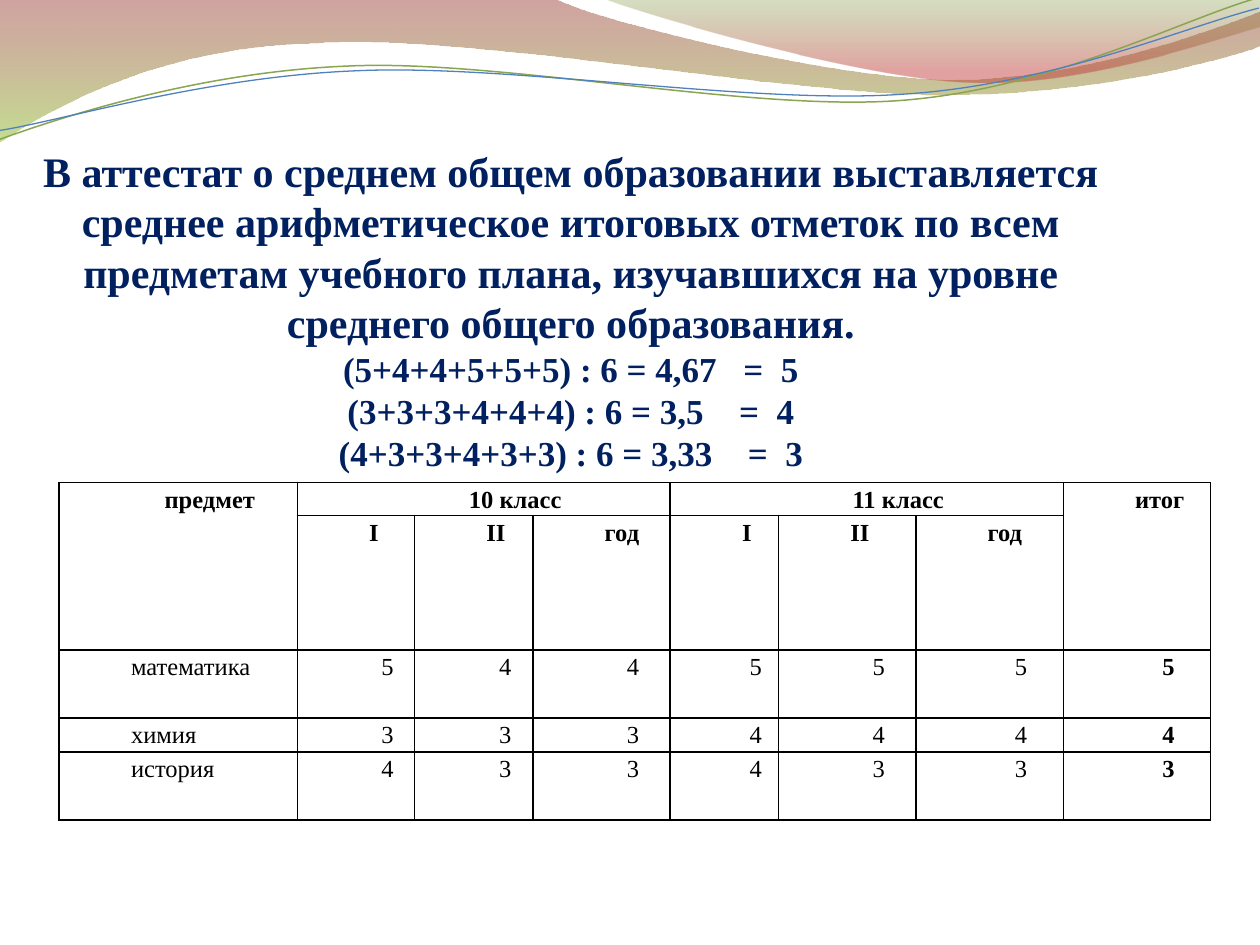
from lxml import etree
from pptx import Presentation
from pptx.dml.color import RGBColor
from pptx.enum import text
from pptx.oxml import ns
from pptx.util import Inches, Pt

FONT = "Times New Roman"
NAVY = RGBColor(0x00, 0x20, 0x60)
BLACK = RGBColor(0, 0, 0)
WINE = RGBColor(0x97, 0x33, 0x30)
LIME = RGBColor(0x95, 0xC2, 0x38)
OLIVE = RGBColor(0x76, 0x95, 0x37)
RED = RGBColor(0xBE, 0x33, 0x30)
GREEN = RGBColor(0x89, 0xA5, 0x4F)
BLUE = RGBColor(0x4F, 0x81, 0xBD)

CENTER = text.PP_ALIGN.CENTER
LEFT = text.PP_ALIGN.LEFT


def write_text(paragraph, content, size=14, color=BLACK, bold=False,
               align=CENTER, tracking=0):
    """Add a run; tracking is extra letter spacing in points."""
    paragraph.alignment = align
    run = paragraph.add_run()
    run.text = content
    run.font.name = FONT
    run.font.size = Pt(size)
    run.font.bold = bold
    run.font.color.rgb = color
    if tracking:
        run.font._element.set("spc", str(tracking * 100))


def draw_outline(shapes, start, segments, close):
    """Draw a path whose segments are one point (line) or three (cubic curve)."""
    corners = [(Inches(x), Inches(y)) for segment in segments for x, y in segment]
    builder = shapes.build_freeform(Inches(start[0]), Inches(start[1]), scale=1.0)
    builder.add_line_segments(corners, close=close)
    shape = builder.convert_to_shape()
    shape.shadow.inherit = False
    lines = iter(list(shape._element.spPr.iter(ns.qn("a:lnTo"))))
    for segment in segments:
        line = next(lines)
        if len(segment) == 3:
            line.tag = ns.qn("a:cubicBezTo")
            for _ in range(2):
                extra = next(lines)
                line.append(extra[0])
                extra.getparent().remove(extra)
    return shape


presentation = Presentation()
presentation.slide_width = Inches(10)
presentation.slide_height = Inches(7.5)
slide = presentation.slides.add_slide(presentation.slide_layouts[6])

# Translucent waves: start, segments, gradient stops (position, colour, opacity %)
waves = [
    ((0, 0),
     [[(4.4, -0.01)],
      [(4.76, 0.17), (6.64, 0.63), (7.58, 0.63)],
      [(8.53, 0.63), (9.58, 0.26), (10, 0.09)],
      [(10.01, 0.36)],
      [(9.83, 0.44), (8.7, 0.76), (7.46, 0.75)],
      [(6.22, 0.75), (3.82, 0.28), (2.57, 0.34)],
      [(1.29, 0.36), (0.46, 0.83), (-0.01, 1.13)]],
     [(0, WINE, 45), (1, LIME, 55)]),
    ((4.79, -0.01),
     [[(5.09, 0.11), (6.82, 0.62), (7.69, 0.65)],
      [(8.56, 0.69), (9.61, 0.32), (10, 0.21)],
      [(10, 0)]],
     [(0, OLIVE, 30), (0.8, RED, 45)]),
]
for start, segments, stops in waves:
    wave = draw_outline(slide.shapes, start, segments, close=True)
    wave.line.fill.background()
    wave.fill.gradient()
    wave.fill.gradient_angle = 270
    for gradient_stop, (position, color, opacity) in zip(wave.fill.gradient_stops, stops):
        gradient_stop.position = position
        gradient_stop.color.rgb = color
    color_tags = wave._element.spPr.iter(ns.qn("a:srgbClr"))
    for color_tag, (position, color, opacity) in zip(color_tags, stops):
        etree.SubElement(color_tag, ns.qn("a:alpha"), val=str(opacity * 1000))

# Thin lines under the waves, tilted as whole shapes
strands = [
    ((-0.02, 0.87),
     [[(0.47, 0.72), (1.58, 0.41), (2.77, 0.42)],
      [(3.96, 0.42), (5.91, 0.93), (7.12, 0.9)],
      [(8.32, 0.87), (9.4, 0.36), (10, 0.22)]],
     GREEN, 0.85),
    ((-0.02, 0.8),
     [[(0.46, 0.75), (1.64, 0.45), (2.83, 0.46)],
      [(4.04, 0.46), (5.96, 0.88), (7.16, 0.85)],
      [(8.35, 0.83), (9.42, 0.42), (10.01, 0.3)]],
     BLUE, 0.75),
]
for start, segments, color, width in strands:
    strand = draw_outline(slide.shapes, start, segments, close=False)
    strand.rotation = 357.3
    strand.fill.background()
    strand.line.color.rgb = color
    strand.line.width = Pt(width)

# Grades table
column_widths = [1.89, 0.93, 0.94, 1.09, 0.86, 1.09, 1.17, 1.17]
row_heights = [0.26, 1.07, 0.54, 0.27, 0.54]
rows = [
    ["предмет", "10 класс", "", "", "11 класс", "", "", "итог"],
    ["", "I", "II", "год", "I", "II", "год", ""],
    ["математика", "5", "4", "4", "5", "5", "5", "5"],
    ["химия", "3", "3", "3", "4", "4", "4", "4"],
    ["история", "4", "3", "3", "4", "3", "3", "3"],
]
table = slide.shapes.add_table(
    len(rows), len(column_widths), Inches(0.47), Inches(3.83),
    Inches(sum(column_widths)), Inches(sum(row_heights))).table
table.first_row = False
table.horz_banding = False
for column, width in zip(table.columns, column_widths):
    column.width = Inches(width)
for row, height in zip(table.rows, row_heights):
    row.height = Inches(height)
for first, last in [((0, 0), (1, 0)), ((0, 1), (0, 3)), ((0, 4), (0, 6)), ((0, 7), (1, 7))]:
    table.cell(*first).merge(table.cell(*last))

last_column = len(column_widths) - 1
for r, values in enumerate(rows):
    for c, value in enumerate(values):
        cell = table.cell(r, c)
        cell.margin_left = cell.margin_right = Inches(0.07)
        cell.margin_top = cell.margin_bottom = 0
        cell.fill.background()
        properties = cell._tc.get_or_add_tcPr()
        for index, side in enumerate(("lnL", "lnR", "lnT", "lnB")):
            border = etree.Element(ns.qn(f"a:{side}"), w=str(Pt(1)))
            solid = etree.SubElement(border, ns.qn("a:solidFill"))
            etree.SubElement(solid, ns.qn("a:srgbClr"), val=str(BLACK))
            properties.insert(index, border)
        if not value:
            continue
        paragraph = cell.text_frame.paragraphs[0]
        paragraph.line_spacing = 1.15
        paragraph._p.get_or_add_pPr().set("marL", str(Inches(0.5)))
        if r == 0:
            centered = c < last_column
        else:
            centered = r > 1 and c > 0
        write_text(paragraph, value, bold=r < 2 or c == last_column,
                   align=CENTER if centered else LEFT)

# Rule and worked averages
box = slide.shapes.add_textbox(Inches(0), Inches(1.09), Inches(9.06), Inches(2.73))
frame = box.text_frame
frame.word_wrap = True
frame.auto_size = text.MSO_AUTO_SIZE.SHAPE_TO_FIT_TEXT
frame.vertical_anchor = text.MSO_ANCHOR.MIDDLE
write_text(frame.paragraphs[0],
           "В аттестат о среднем общем образовании выставляется среднее "
           "арифметическое итоговых отметок по всем предметам учебного плана, "
           "изучавшихся на уровне среднего общего образования.",
           size=24, color=NAVY, bold=True)
averages = [
    ("(5+4+4+5+5+5) : 6 = 4,67", 10, "5"),
    ("(3+3+3+4+4+4) : 6 = 3,5", 15, "4"),
    ("(4+3+3+4+3+3) : 6 = 3,33", 15, "3"),
]
for division, gap, grade in averages:
    paragraph = frame.add_paragraph()
    for content, tracking in [(division, 0), (" ", gap), ("=", 0), (" ", 5), (grade, 0)]:
        write_text(paragraph, content, size=20, color=NAVY, bold=True, tracking=tracking)

presentation.save("out.pptx")
